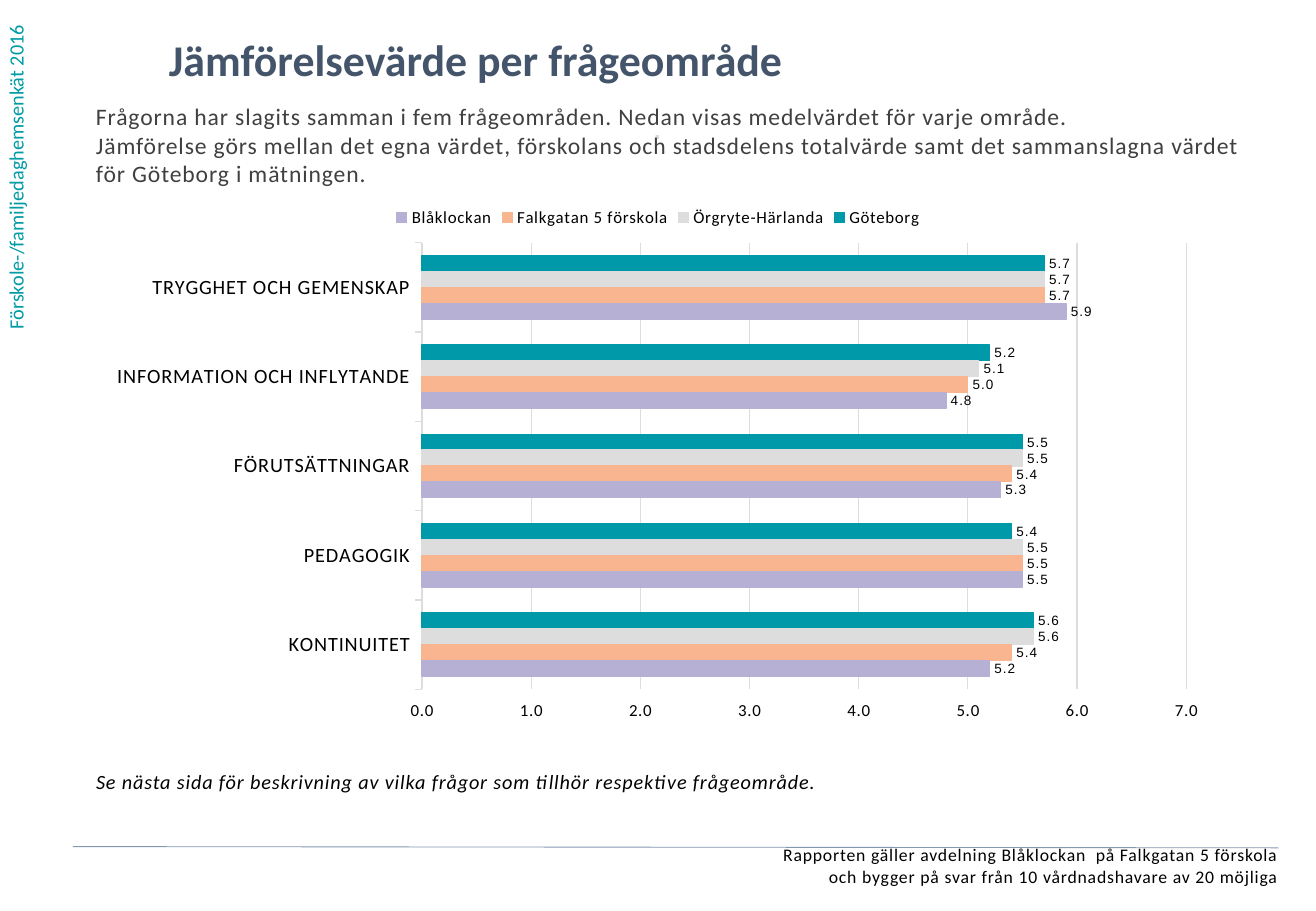
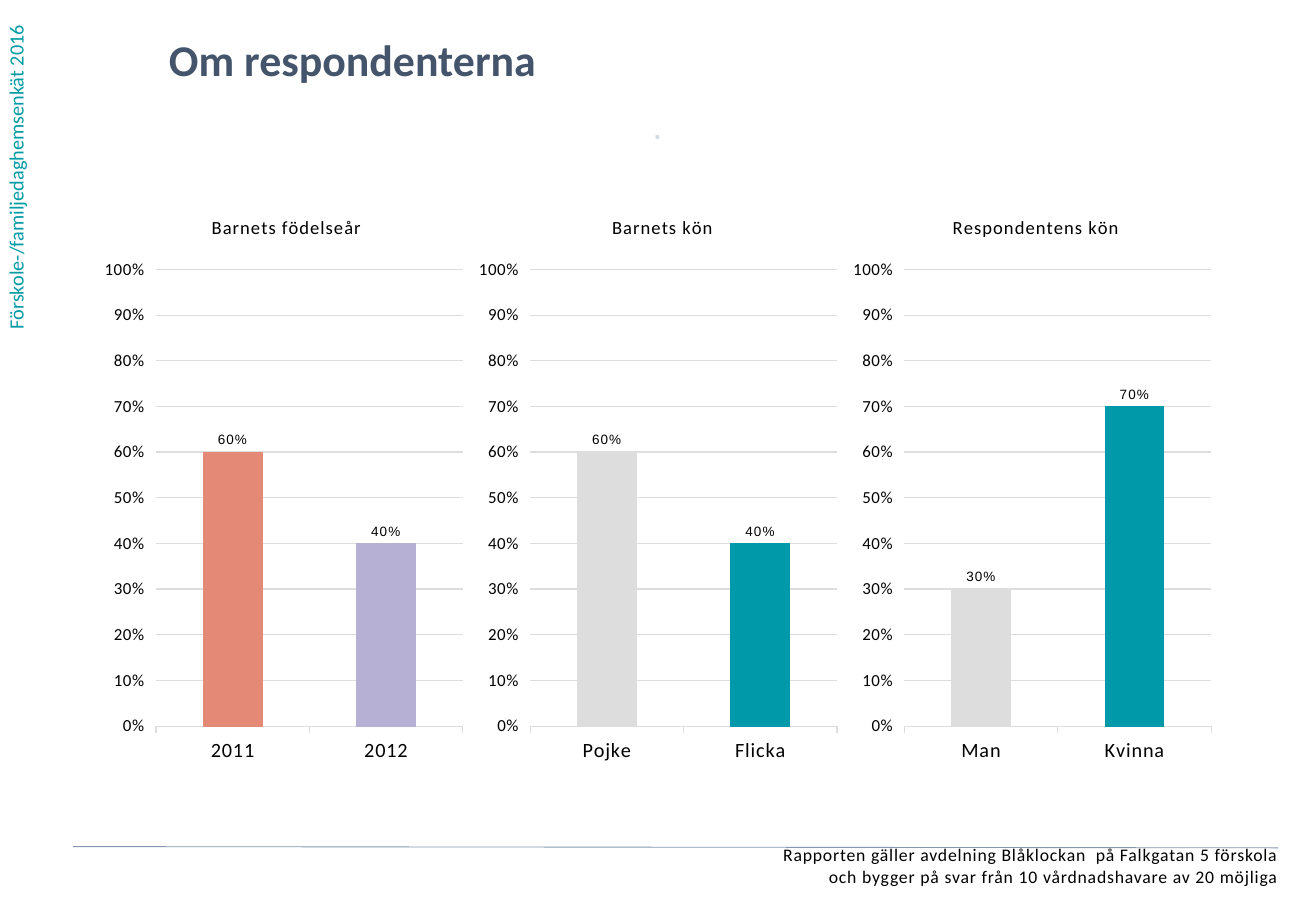
from lxml import etree
from pptx import Presentation
from pptx.chart.data import CategoryChartData
from pptx.dml.color import RGBColor
from pptx.enum.chart import (XL_CHART_TYPE, XL_LABEL_POSITION, XL_LEGEND_POSITION,
                             XL_TICK_LABEL_POSITION, XL_TICK_MARK)
from pptx.enum.shapes import MSO_CONNECTOR
from pptx.enum.text import PP_ALIGN
from pptx.oxml.ns import qn
from pptx.util import Inches, Pt

BARS = XL_CHART_TYPE.BAR_CLUSTERED
COLS = XL_CHART_TYPE.COLUMN_CLUSTERED
FAR_SIDE = XL_TICK_LABEL_POSITION.HIGH
OUT_END = XL_LABEL_POSITION.OUTSIDE_END
OUTSIDE = XL_TICK_MARK.OUTSIDE
LEGEND_TOP = XL_LEGEND_POSITION.TOP
STRAIGHT = MSO_CONNECTOR.STRAIGHT
LEFT, CENTER, RIGHT = PP_ALIGN.LEFT, PP_ALIGN.CENTER, PP_ALIGN.RIGHT

BLACK, NAVY, GRAY, DOT = "000000", "44546A", "404040", "D2D9E2"
SIDE, RULE = "009BA4", "8497B0"
TEAL, LIGHT, PEACH, LILAC, CORAL = "0099AA", "DDDDDD", "F9B590", "B6B1D4", "E58977"

FOOTER = ["Rapporten gäller avdelning Blåklockan  på Falkgatan 5 förskola",
          "och bygger på svar från 10 vårdnadshavare av 20 möjliga"]
INTRO = ["Frågorna har slagits samman i fem frågeområden. "
         "Nedan visas medelvärdet för varje område.",
         "Jämförelse görs mellan det egna värdet, förskolans och stadsdelens "
         "totalvärde samt det sammanslagna värdet för Göteborg i mätningen."]
NOTE = ["Se nästa sida för beskrivning av vilka frågor som tillhör "
        "respektive frågeområde."]
AREAS = ["TRYGGHET OCH GEMENSKAP", "INFORMATION OCH INFLYTANDE",
         "FÖRUTSÄTTNINGAR", "PEDAGOGIK", "KONTINUITET"]
SCORES = [("Göteborg", TEAL, [5.7, 5.2, 5.5, 5.4, 5.6]),
          ("Örgryte-Härlanda", LIGHT, [5.7, 5.1, 5.5, 5.5, 5.6]),
          ("Falkgatan 5 förskola", PEACH, [5.7, 5.0, 5.4, 5.5, 5.4]),
          ("Blåklockan", LILAC, [5.9, 4.8, 5.3, 5.5, 5.2])]
# title, title's left edge, categories, shares, colours
GROUPS = [("Barnets födelseår", 0.3, ["2012", "2011"], [0.4, 0.6], [LILAC, CORAL]),
          ("Barnets kön", 0.37, ["Flicka", "Pojke"], [0.4, 0.6], [TEAL, LIGHT]),
          ("Respondentens kön", 0.28, ["Kvinna", "Man"], [0.7, 0.3], [TEAL, LIGHT])]


def rgb(code):
    return RGBColor.from_string(code)


def style(font, size, color=BLACK, name="Calibri", bold=False, italic=False, gap=50):
    """Set a font; gap is letter spacing in hundredths of a point."""
    font.size, font.name = Pt(size), name
    font.bold, font.italic = bold, italic
    font.color.rgb = rgb(color)
    if gap:
        font._rPr.set("spc", str(gap))


def paint(form, color):
    """Give a bar its fill and matching outline."""
    form.fill.solid()
    form.fill.fore_color.rgb = rgb(color)
    draw(form.line, color, 0.75)


def draw(line, color, width):
    line.color.rgb = rgb(color)
    line.width = Pt(width)


def place(node, index, **parts):
    """Give a chart part a fixed place, as fractions of the chart."""
    old = node.find(qn("c:layout"))
    if old is not None:
        node.remove(old)
    layout = etree.Element(qn("c:layout"))
    manual = etree.SubElement(layout, qn("c:manualLayout"))
    if "w" in parts:
        etree.SubElement(manual, qn("c:layoutTarget")).set("val", "inner")
    for key in "xy":
        etree.SubElement(manual, qn(f"c:{key}Mode")).set("val", "edge")
    for key, part in parts.items():
        etree.SubElement(manual, qn(f"c:{key}")).set("val", str(part))
    node.insert(index, layout)


class Deck:
    def __init__(self):
        self.prs = Presentation()
        self.prs.slide_width = Inches(10.83)
        self.prs.slide_height = Inches(7.5)
        self.slide = None

    def start(self, title):
        """Add a slide with the parts that all slides share."""
        self.slide = self.prs.slides.add_slide(self.prs.slide_layouts[6])
        side = self.text((-0.02, 0, 0.4, 2.81), ["Förskole-/familjedaghemsenkät 2016"],
                         12, SIDE, inset=(0.1, 0.05), gap=0)
        side._txBody.bodyPr.set("vert", "vert270")
        self.text((1.39, 0.27, 8.34, 0.57), [title], 26, NAVY, bold=True, gap=0)
        self.text((0.12, 6.95, 10.4, 0.43), FOOTER, 10.5, align=RIGHT)
        self.text((3.87, 1.02, 3.08, 0.39), ["⋅"], 12, DOT, align=CENTER, bold=True)
        self.line((0.6, 6.97), (10.52, 6.98))

    def text(self, box, lines, size, color=BLACK, align=LEFT, inset=(0, 0), **look):
        frame = self.slide.shapes.add_textbox(*map(Inches, box)).text_frame
        frame.word_wrap = True
        frame.margin_left = frame.margin_right = Inches(inset[0])
        frame.margin_top = frame.margin_bottom = Inches(inset[1])
        for i, line in enumerate(lines):
            para = frame.add_paragraph() if i else frame.paragraphs[0]
            para.alignment = align
            run = para.add_run()
            run.text = line
            style(run.font, size, color, **look)
        return frame

    def line(self, start, end):
        rule = self.slide.shapes.add_connector(STRAIGHT, *map(Inches, start + end))
        draw(rule.line, RULE, 0.5)
        etree.SubElement(rule._element.spPr, qn("a:effectLst"))

    def chart(self, kind, box, cats, rows, form, top, step, area):
        """Add a bar or column chart; area is the place of its plot."""
        data = CategoryChartData()
        data.categories = cats
        for name, _, vals in rows:
            data.add_series(name, vals)
        chart = self.slide.shapes.add_chart(kind, *map(Inches, box), data).chart
        chart.has_title = chart.has_legend = False
        style(chart.font, 10)
        plot = chart.plots[0]
        plot.gap_width, plot.overlap = 162, 0
        plot.vary_by_categories = False
        place(plot._element.getparent(), 0, **dict(zip("xywh", area)))
        for series, (_, color, _) in zip(plot.series, rows):
            paint(series.format, color)
            series.invert_if_negative = False
            tags = series.data_labels
            tags.show_value = True
            tags.position = OUT_END
            tags.number_format, tags.number_format_is_linked = form, False
            style(tags.font, 8, name="Arial")
        self.axes(chart, form, top, step)
        return chart

    def axes(self, chart, form, top, step):
        """Style both axes; categories run backwards, so values sit at the far side."""
        cat, val = chart.category_axis, chart.value_axis
        cat.reverse_order = True
        cat.has_major_gridlines = False
        draw(cat.format.line, LIGHT, 0.75)
        val.minimum_scale, val.maximum_scale, val.major_unit = 0, top, step
        val.has_major_gridlines = True
        draw(val.major_gridlines.format.line, LIGHT, 0.75)
        val.format.line.fill.background()
        val.tick_label_position = FAR_SIDE
        val.tick_labels.number_format = form
        val.tick_labels.number_format_is_linked = False
        for axis, size in ((cat, 12), (val, 10)):
            axis.major_tick_mark = OUTSIDE
            style(axis.tick_labels.font, size)

    def legend(self, chart):
        chart.has_legend = True
        chart.legend.position = LEGEND_TOP
        chart.legend.include_in_layout = False
        style(chart.legend.font, 10)

    def head(self, chart, title, left):
        """Put a title on a chart, left being its edge as a fraction."""
        chart.has_title = True
        run = chart.chart_title.text_frame.paragraphs[0].add_run()
        run.text = title
        style(run.font, 11)
        place(chart.chart_title._element, 1, x=left, y=0.03)


def main():
    deck = Deck()

    deck.start("Jämförelsevärde per frågeområde")
    deck.text((0.79, 0.84, 9.46, 0.75), INTRO, 14, GRAY)
    deck.text((0.79, 6.33, 9.25, 0.3), NOTE, 12, italic=True)
    chart = deck.chart(BARS, (0.79, 1.6, 9.25, 4.43), AREAS, SCORES,
                       "0.0;0.0", 7, 1, (0.29, 0.09, 0.68, 0.83))
    deck.legend(chart)

    deck.start("Om respondenterna")
    wide = 3.08
    for i, (title, left, cats, vals, hues) in enumerate(GROUPS):
        chart = deck.chart(COLS, (0.79 + i * wide, 1.6, wide, 4.76), cats,
                           [("Series 1", TEAL, vals)], "0%;0%", 1, 0.1,
                           (0.16, 0.13, 0.82, 0.79))
        deck.head(chart, title, left)
        for j, hue in enumerate(hues):
            paint(chart.plots[0].series[0].points[j].format, hue)

    deck.prs.save("out.pptx")


if __name__ == "__main__":
    main()
